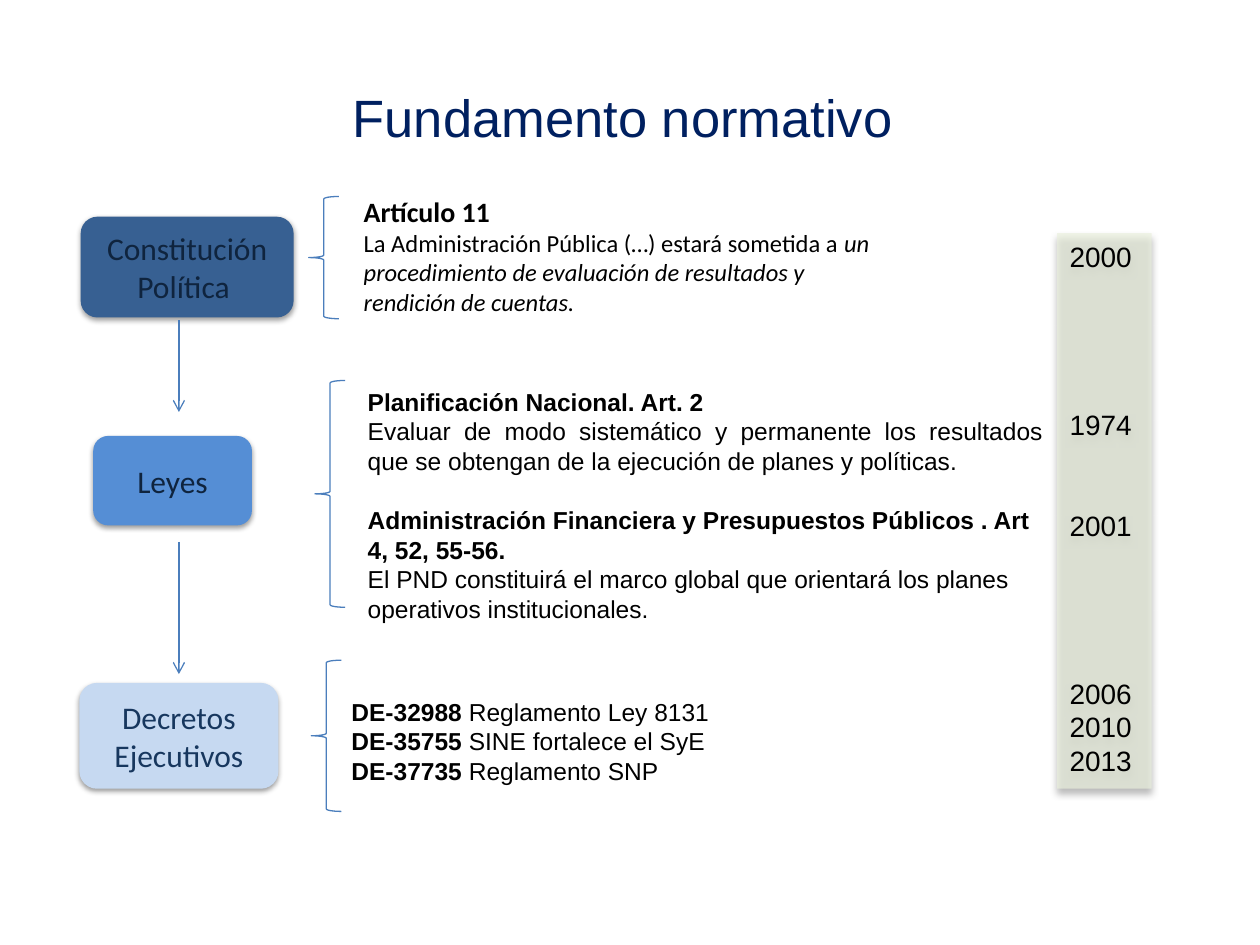
from lxml import etree
from pptx import Presentation
from pptx.dml.color import RGBColor
from pptx.enum.shapes import MSO_CONNECTOR, MSO_SHAPE
from pptx.enum.text import MSO_ANCHOR, PP_ALIGN
from pptx.oxml import parse_xml
from pptx.oxml.ns import nsdecls, qn
from pptx.util import Inches, Pt

LEFT, CENTER, JUSTIFY = PP_ALIGN.LEFT, PP_ALIGN.CENTER, PP_ALIGN.JUSTIFY
TOP, MIDDLE = MSO_ANCHOR.TOP, MSO_ANCHOR.MIDDLE
ROUNDED, RECTANGLE, BRACE = MSO_SHAPE.ROUNDED_RECTANGLE, MSO_SHAPE.RECTANGLE, MSO_SHAPE.LEFT_BRACE
STRAIGHT = MSO_CONNECTOR.STRAIGHT

BLACK = RGBColor(0x00, 0x00, 0x00)
WHITE = RGBColor(0xFF, 0xFF, 0xFF)
NAVY = RGBColor(0x00, 0x20, 0x60)
INK = RGBColor(0x0F, 0x24, 0x3E)
DARK_BLUE = RGBColor(0x37, 0x60, 0x92)
MID_BLUE = RGBColor(0x55, 0x8E, 0xD5)
PALE_BLUE = RGBColor(0xC6, 0xD9, 0xF1)
DEEP_BLUE = RGBColor(0x17, 0x37, 0x5E)
LINE_BLUE = RGBColor(0x4B, 0x7E, 0xBC)
PALE_GREEN = RGBColor(0xEB, 0xF1, 0xDE)

TITLE = "Fundamento normativo "
LEVELS = [
    ("Constitución Política ", (0.64, 1.72, 1.69, 0.8), DARK_BLUE, INK),
    ("Leyes", (0.74, 3.46, 1.26, 0.71), MID_BLUE, INK),
    ("Decretos Ejecutivos", (0.63, 5.42, 1.58, 0.84), PALE_BLUE, DEEP_BLUE),
]
BRACES = [(2.45, 1.56, 0.24, 0.97), (2.5, 3.02, 0.24, 1.8), (2.47, 5.24, 0.24, 1.2)]
ARROW_X = 1.42
ARROWS = [(2.54, 3.27), (4.3, 5.35)]

CONSTITUTION = [
    {"runs": [("Artículo 11", "bold")], "size": 16},
    {"runs": [
        ("La Administración Pública (…) estará sometida a ", ""),
        ("un procedimiento de evaluación de resultados y rendición de cuentas.", "italic"),
    ]},
]
LAWS = [
    {"runs": [("Planificación Nacional. Art. 2", "bold")], "align": JUSTIFY},
    {"runs": [("Evaluar de modo sistemático y permanente los resultados que se obtengan "
               "de la ejecución de planes y políticas.", "")], "align": JUSTIFY},
    {"runs": [("Administración Financiera y Presupuestos Públicos . Art 4, 52, 55-56.", "bold")],
     "gap": 1},
    {"runs": [("El PND constituirá el marco global que orientará los planes "
               "operativos institucionales.", "")]},
]
DECREES = [
    {"runs": [(number, "bold"), (subject, "")]}
    for number, subject in [
        ("DE-32988 ", "Reglamento Ley 8131"),
        ("DE-35755 ", "SINE fortalece el SyE"),
        ("DE-37735 ", "Reglamento SNP"),
    ]
]
YEARS = [
    {"runs": [(year, "")], "gap": gap}
    for year, gap in [("2000", 0), ("1974", 4), ("2001", 2), ("2006", 4), ("2010", 0), ("2013", 0)]
]


def write_text(shape, paragraphs, size=14, font="Arial", color=BLACK, align=LEFT,
               anchor=TOP, pitch=None):
    frame = shape.text_frame
    frame.word_wrap = True
    frame.vertical_anchor = anchor
    for index, item in enumerate(paragraphs):
        paragraph = frame.add_paragraph() if index else frame.paragraphs[0]
        paragraph.alignment = item.get("align", align)
        if pitch:
            paragraph.line_spacing = Pt(pitch)
            paragraph.space_before = Pt(pitch * item.get("gap", 0))
        for text, style in item["runs"]:
            run = paragraph.add_run()
            run.text = text
            run.font.name = font
            run.font.size = Pt(item.get("size", size))
            run.font.color.rgb = color
            run.font.bold = style == "bold"
            run.font.italic = style == "italic"


def add_box(slide, kind, box, fill=None, line=None):
    shape = slide.shapes.add_shape(kind, *map(Inches, box))
    shape.shadow.inherit = False
    if fill is None:
        shape.fill.background()
    else:
        shape.fill.solid()
        shape.fill.fore_color.rgb = fill
    if line is None:
        shape.line.fill.background()
    else:
        shape.line.color.rgb = line
        shape.line.width = Pt(0.75)
    return shape


def add_shadow(shape, blur, distance, opacity):
    effects = shape._element.spPr.find(qn("a:effectLst"))
    effects.append(parse_xml(
        f'<a:outerShdw {nsdecls("a")} blurRad="{Pt(blur)}" dist="{Pt(distance)}" '
        f'dir="5400000" rotWithShape="0"><a:srgbClr val="000000">'
        f'<a:alpha val="{opacity * 1000}"/></a:srgbClr></a:outerShdw>'))


def add_arrow(slide, x, start, end):
    arrow = slide.shapes.add_connector(STRAIGHT, *map(Inches, (x, start, x, end)))
    arrow.line.color.rgb = LINE_BLUE
    arrow.line.width = Pt(0.75)
    etree.SubElement(arrow.line._get_or_add_ln(), qn("a:tailEnd"), type="arrow")
    etree.SubElement(arrow._element.spPr, qn("a:effectLst"))


def main():
    presentation = Presentation()
    presentation.slide_width, presentation.slide_height = Inches(10), Inches(7.5)
    slide = presentation.slides.add_slide(presentation.slide_layouts[5])

    title = slide.shapes.title
    title.left, title.top, title.width, title.height = map(Inches, (0.5, 0.3, 9, 1.25))
    write_text(title, [{"runs": [(TITLE, "")]}], size=30, color=NAVY, align=CENTER, anchor=MIDDLE)

    timeline = add_box(slide, RECTANGLE, (8.39, 1.85, 0.75, 4.41), PALE_GREEN)
    fill_color = timeline._element.spPr.find(qn("a:solidFill"))[0]
    etree.SubElement(fill_color, qn("a:alpha"), val="67000")
    add_shadow(timeline, 4, 3, 40)
    write_text(timeline, YEARS, size=16, pitch=19.2)

    for label, box, fill, color in LEVELS:
        level = add_box(slide, ROUNDED, box, fill)
        add_shadow(level, 3.1, 1.6, 38)
        write_text(level, [{"runs": [(label, "")]}], size=18, font="Calibri", color=color,
                   align=CENTER, anchor=MIDDLE)

    article = add_box(slide, ROUNDED, (2.74, 1.53, 4.47, 0.99), WHITE)
    write_text(article, CONSTITUTION, font="Calibri", anchor=MIDDLE)

    for box, paragraphs in [((2.82, 3.02, 5.56, 1.99), LAWS), ((2.69, 5.48, 5.91, 0.81), DECREES)]:
        write_text(slide.shapes.add_textbox(*map(Inches, box)), paragraphs, pitch=16.9)

    for start, end in ARROWS:
        add_arrow(slide, ARROW_X, start, end)
    for box in BRACES:
        add_box(slide, BRACE, box, line=LINE_BLUE)

    presentation.save("out.pptx")


if __name__ == "__main__":
    main()
